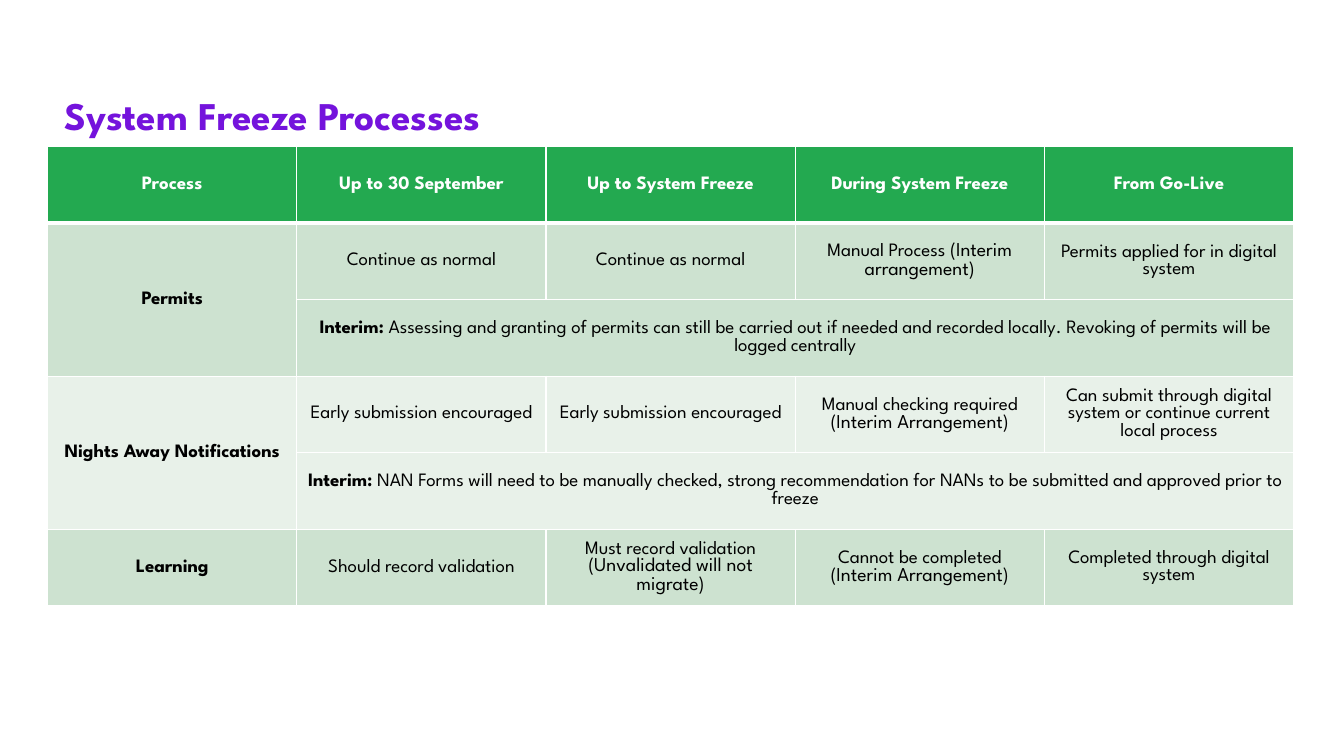
from dataclasses import dataclass, field

from lxml import etree
from pptx import Presentation
from pptx import util as u
from pptx.dml import color
from pptx.enum import text
from pptx.oxml import ns


@dataclass(frozen=True)
class Theme:
    font: str = "League Spartan"
    purple: str = "7413DC"
    green: str = "23A950"
    mint: str = "CDE2D0"
    interim_mint: str = "CCE2D0"
    pale: str = "E8F1E9"
    white: str = "FFFFFF"
    border: float = 1
    header_border: float = 3
    styles: dict = field(default_factory=lambda: {
        "title": {"size": u.Pt(28), "bold": True, "color": "7413DC"},
        "header": {"size": u.Pt(13.5), "bold": True, "color": "FFFFFF"},
        "label": {"size": u.Pt(13.5), "bold": True, "color": "000000"},
        "body": {"size": u.Pt(13.5), "bold": False, "color": "000000"},
        "aside": {"size": u.Pt(14), "bold": False, "color": "000000"},
    })


THEME = Theme()
COLUMN_WIDTH = u.Cm(6.28)
ROW_HEIGHT = u.Cm(1.93)

HEADINGS = ["Process", "Up to 30 September", "Up to System Freeze",
            "During System Freeze", "From Go-Live"]
PROCESSES = [
    {
        "name": "Permits",
        "fills": (THEME.mint, THEME.interim_mint),
        "stages": [
            [[("Continue as normal", "body")]],
            [[("Continue as normal", "body")]],
            [[("Manual Process ", "body"), ("(Interim arrangement)", "aside")]],
            [[("Permits applied for in digital system", "body")]],
        ],
        "interim": " Assessing and granting of permits can still be carried out if needed "
                   "and recorded locally. Revoking of permits will be logged centrally",
    },
    {
        "name": "Nights Away Notifications",
        "fills": (THEME.pale, THEME.pale),
        "stages": [
            [[("Early submission encouraged", "body")]],
            [[("Early submission encouraged", "body")]],
            [[("Manual checking required", "body"), (" (Interim Arrangement)", "aside")]],
            [[("Can submit through digital system or continue current local process", "body")]],
        ],
        "interim": " NAN Forms will need to be manually checked, strong recommendation "
                   "for NANs to be submitted and approved prior to freeze",
    },
    {
        "name": "Learning",
        "fills": (THEME.mint,),
        "stages": [
            [[("Should record validation", "body")]],
            [[("Must record validation", "body")], [("(Unvalidated will not migrate)", "aside")]],
            [[("Cannot be completed ", "body"), ("(Interim Arrangement)", "aside")]],
            [[("Completed through digital system", "body")]],
        ],
        "interim": None,
    },
]


def set_attributes(target, values):
    for name, value in values.items():
        setattr(target, name, value)


def write(frame, paragraphs, alignment):
    for index, runs in enumerate(paragraphs):
        paragraph = frame.add_paragraph() if index else frame.paragraphs[0]
        paragraph.alignment = alignment
        for content, style in runs:
            run = paragraph.add_run()
            run.text = content
            values = dict(THEME.styles[style], name=THEME.font)
            run.font.color.rgb = color.RGBColor.from_string(values.pop("color"))
            set_attributes(run.font, values)


def add_title(slide, content):
    shape = slide.shapes.add_textbox(u.Cm(1.19), u.Cm(1.88), u.Cm(14.88), u.Cm(1.45))
    set_attributes(shape.text_frame, {
        "word_wrap": True,
        "margin_left": u.Cm(0.43),
        "margin_top": u.Cm(0.43),
        "margin_bottom": 0,
    })
    write(shape.text_frame, [[(content, "title")]], text.PP_ALIGN.LEFT)


def fill_cell(cell, fill):
    cell.fill.solid()
    cell.fill.fore_color.rgb = color.RGBColor.from_string(fill)


def set_borders(cell, widths):
    properties = cell._tc.get_or_add_tcPr()
    for index, (side, width) in enumerate(widths.items()):
        line = etree.Element(ns.qn(f"a:ln{side}"), w=str(int(u.Pt(width))))
        solid = etree.SubElement(line, ns.qn("a:solidFill"))
        etree.SubElement(solid, ns.qn("a:srgbClr"), val=THEME.white)
        properties.insert(index, line)


def write_cell(cell, paragraphs):
    cell.vertical_anchor = text.MSO_ANCHOR.MIDDLE
    write(cell.text_frame, paragraphs, text.PP_ALIGN.CENTER)


def add_process(table, top, process):
    fills = process["fills"]
    last = top + len(fills) - 1
    for row, fill in enumerate(fills, top):
        for column in range(len(HEADINGS)):
            fill_cell(table.cell(row, column), fill if column else fills[0])
    write_cell(table.cell(top, 0), [[(process["name"], "label")]])
    for column, paragraphs in enumerate(process["stages"], 1):
        write_cell(table.cell(top, column), paragraphs)
    if process["interim"]:
        table.cell(top, 0).merge(table.cell(last, 0))
        table.cell(last, 1).merge(table.cell(last, len(HEADINGS) - 1))
        write_cell(table.cell(last, 1),
                   [[("Interim:", "label"), (process["interim"], "body")]])
    return last + 1


def add_process_table(slide):
    row_count = 1 + sum(len(process["fills"]) for process in PROCESSES)
    column_count = len(HEADINGS)
    table = slide.shapes.add_table(
        row_count, column_count, u.Cm(1.2), u.Cm(3.69),
        COLUMN_WIDTH * column_count, ROW_HEIGHT * row_count).table
    for column in table.columns:
        column.width = COLUMN_WIDTH
    for row in table.rows:
        row.height = ROW_HEIGHT
    for column, heading in enumerate(HEADINGS):
        fill_cell(table.cell(0, column), THEME.green)
        write_cell(table.cell(0, column), [[(heading, "header")]])
    top = 1
    for process in PROCESSES:
        top = add_process(table, top, process)
    for row in range(row_count):
        for column in range(column_count):
            set_borders(table.cell(row, column), {
                "L": THEME.border,
                "R": THEME.border,
                "T": THEME.header_border if row == 1 else THEME.border,
                "B": THEME.header_border if row == 0 else THEME.border,
            })


def main():
    presentation = Presentation()
    presentation.slide_width = u.Cm(33.87)
    presentation.slide_height = u.Cm(19.05)
    slide = presentation.slides.add_slide(presentation.slide_layouts[6])
    add_process_table(slide)
    add_title(slide, "System Freeze Processes")
    presentation.save("out.pptx")


if __name__ == "__main__":
    main()
